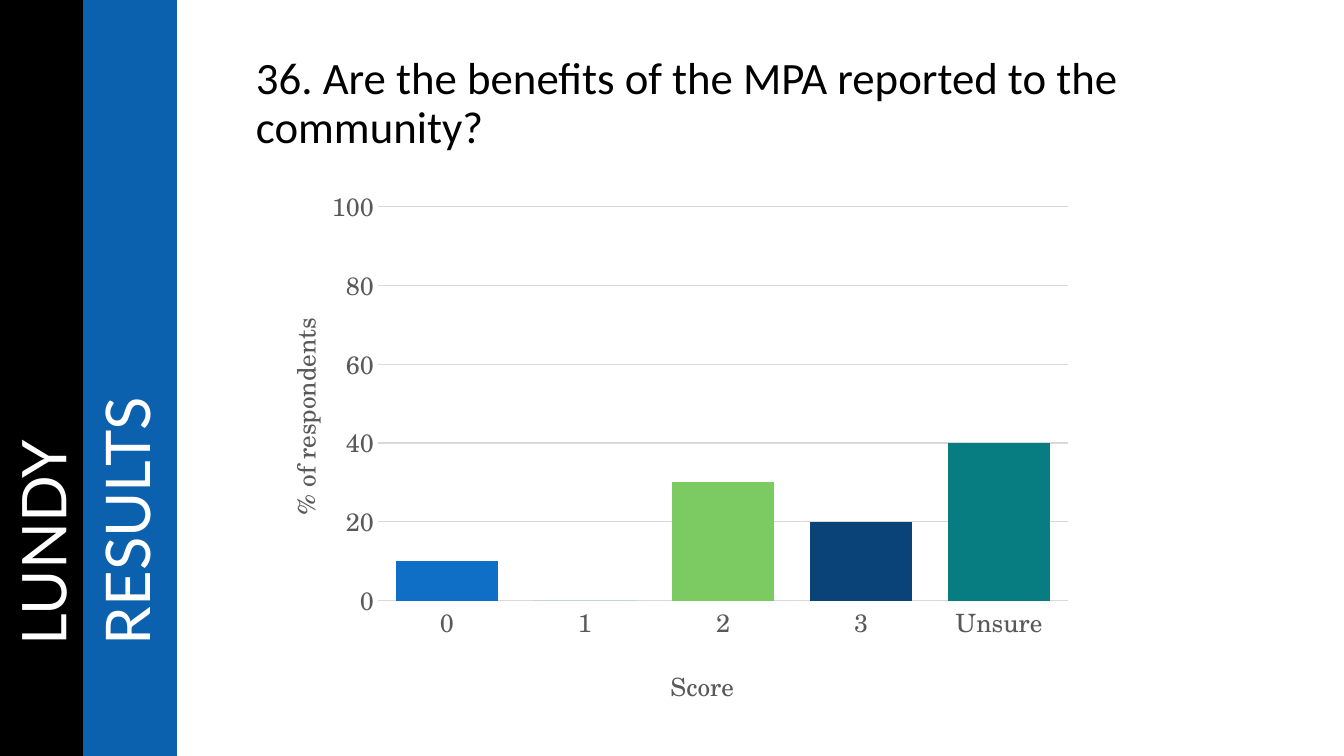
import pptx
import pptx.chart.data
import pptx.dml.color
import pptx.enum.chart
import pptx.enum.shapes
import pptx.enum.text
import pptx.oxml
import pptx.util
from dataclasses import dataclass

QUESTION = "36. Are the benefits of the MPA reported to the community?"
RESPONSES = {"0": 10, "1": 0, "2": 30, "3": 20, "Unsure": 40}
SCORE_TITLE = "Score"
RESPONDENTS_TITLE = "% of respondents"


@dataclass(frozen=True)
class Theme:
    black: str = "000000"
    white: str = "FFFFFF"
    axis_text: str = "595959"
    grid: str = "D9D9D9"
    bars: tuple = ("0F6FC6", "0BD0D9", "7CCA62", "094377", "077D82")
    title_font: str = "Calibri"
    chart_font: str = "TeX Gyre Schola"
    band_font: str = "Lato"
    title_size: int = 32
    chart_size: int = 18
    band_size: int = 44
    line_width: float = 0.75


THEME = Theme()
BANDS = [("LUNDY", THEME.black), ("RESULTS", "0C61AF")]

SLIDE_WIDTH, SLIDE_HEIGHT = 13.33, 7.5
BAND_WIDTH, BAND_STEP, BAND_CENTRE = 0.93, 0.83, 0.46
BAND_INDENT = 1.1
CONTENT_LEFT, TITLE_TOP, CHART_TOP = 2.44, 0.31, 1.76
TITLE_WIDTH, CHART_WIDTH, CHART_HEIGHT = 9.71, 8.33, 5.39
PLOT_SHARE = {"x": 0.157, "y": 0.054, "w": 0.822, "h": 0.725}
SCORE_SHARE = {"x": 0.5, "y": 0.89}
RESPONDENTS_SHARE = {"x": 0.04, "y": 0.25}


def inches(*lengths):
    return [pptx.util.Inches(length) for length in lengths]


def colour(value):
    return pptx.dml.color.RGBColor.from_string(value)


def style_font(font, name, size, value):
    font.name = name
    font.size = pptx.util.Pt(size)
    font.bold = False
    font.color.rgb = colour(value)


def write_text(shape, text, name, size, value):
    frame = shape.text_frame
    frame.word_wrap = True
    frame.vertical_anchor = pptx.enum.text.MSO_ANCHOR.MIDDLE
    paragraph = frame.paragraphs[0]
    paragraph.text = text
    paragraph.alignment = pptx.enum.text.PP_ALIGN.LEFT
    paragraph.line_spacing = 0.9
    style_font(paragraph.font, name, size, value)


def layout_element(shares, inner=False):
    modes = "".join(f'<c:{side}Mode val="edge"/>' for side in "xy")
    target = '<c:layoutTarget val="inner"/>' if inner else ""
    values = "".join(f'<c:{key} val="{share}"/>' for key, share in shares.items())
    return pptx.oxml.parse_xml(
        '<c:layout xmlns:c="http://schemas.openxmlformats.org/drawingml/2006/chart">'
        f"<c:manualLayout>{target}{modes}{values}</c:manualLayout></c:layout>"
    )


def place(element, shares, inner=False):
    for existing in element.xpath("c:layout"):
        element.remove(existing)
    texts = element.xpath("c:tx")
    layout = layout_element(shares, inner)
    if texts:
        texts[0].addnext(layout)
    else:
        element.insert(0, layout)


def draw_line(line):
    line.color.rgb = colour(THEME.grid)
    line.width = pptx.util.Pt(THEME.line_width)


def style_axis(axis, title, shares):
    axis.major_tick_mark = pptx.enum.chart.XL_TICK_MARK.NONE
    axis.minor_tick_mark = pptx.enum.chart.XL_TICK_MARK.NONE
    style_font(axis.tick_labels.font, THEME.chart_font, THEME.chart_size, THEME.axis_text)
    axis.axis_title.text_frame.text = title
    paragraph = axis.axis_title.text_frame.paragraphs[0]
    style_font(paragraph.font, THEME.chart_font, THEME.chart_size, THEME.axis_text)
    place(axis.axis_title._element, shares)


def add_question(slide):
    box = slide.shapes.add_textbox(
        *inches(CONTENT_LEFT, TITLE_TOP, TITLE_WIDTH, CHART_TOP - TITLE_TOP))
    write_text(box, QUESTION, THEME.title_font, THEME.title_size, THEME.black)


def add_response_chart(slide):
    data = pptx.chart.data.CategoryChartData()
    data.categories = list(RESPONSES)
    data.add_series("Series 1", list(RESPONSES.values()))
    chart = slide.shapes.add_chart(
        pptx.enum.chart.XL_CHART_TYPE.COLUMN_CLUSTERED,
        *inches(CONTENT_LEFT, CHART_TOP, CHART_WIDTH, CHART_HEIGHT), data).chart
    chart.has_legend = False
    chart.has_title = False
    style_font(chart.font, THEME.chart_font, THEME.chart_size, THEME.black)

    plot = chart.plots[0]
    plot.gap_width = 35
    plot.overlap = -2
    plot.vary_by_categories = False
    for index, value in enumerate(THEME.bars):
        fill = plot.series[0].points[index].format.fill
        fill.solid()
        fill.fore_color.rgb = colour(value)

    score_axis, respondents_axis = chart.category_axis, chart.value_axis
    style_axis(score_axis, SCORE_TITLE, SCORE_SHARE)
    style_axis(respondents_axis, RESPONDENTS_TITLE, RESPONDENTS_SHARE)
    respondents_axis.axis_title.text_frame._txBody.bodyPr.set("rot", "-5400000")
    respondents_axis.minimum_scale = 0
    respondents_axis.maximum_scale = 100
    respondents_axis.major_unit = 20
    respondents_axis.format.line.fill.background()
    draw_line(score_axis.format.line)
    draw_line(respondents_axis.major_gridlines.format.line)
    place(chart._chartSpace.chart.plotArea, PLOT_SHARE, inner=True)


def add_bands(slide):
    for index, (label, value) in enumerate(BANDS):
        centre = BAND_CENTRE + index * BAND_STEP
        band = slide.shapes.add_shape(
            pptx.enum.shapes.MSO_SHAPE.RECTANGLE,
            *inches(centre - SLIDE_HEIGHT / 2, (SLIDE_HEIGHT - BAND_WIDTH) / 2,
                    SLIDE_HEIGHT, BAND_WIDTH))
        band.rotation = 270
        band.shadow.inherit = False
        band.fill.solid()
        band.fill.fore_color.rgb = colour(value)
        band.line.fill.background()
        write_text(band, label, THEME.band_font, THEME.band_size, THEME.white)
        band.text_frame.margin_left = pptx.util.Inches(BAND_INDENT)


def main():
    presentation = pptx.Presentation()
    presentation.slide_width, presentation.slide_height = inches(SLIDE_WIDTH, SLIDE_HEIGHT)
    slide = presentation.slides.add_slide(presentation.slide_layouts[6])
    add_question(slide)
    add_response_chart(slide)
    add_bands(slide)
    presentation.save("out.pptx")


if __name__ == "__main__":
    main()
